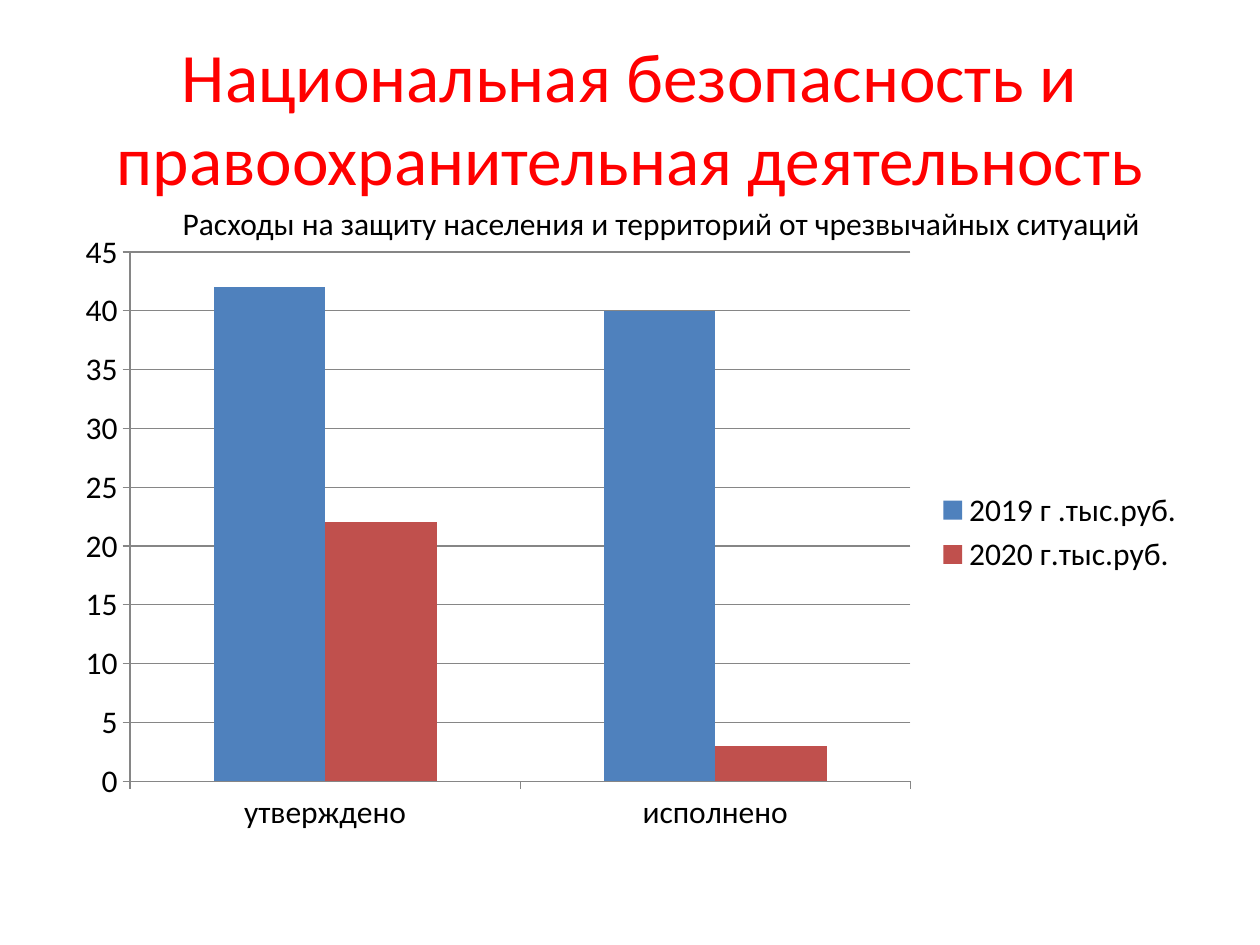
from dataclasses import dataclass

from pptx import Presentation
from pptx.chart.data import CategoryChartData as Data
from pptx.dml.color import RGBColor
from pptx.enum.chart import XL_CHART_TYPE as Kind, XL_LEGEND_POSITION as Side, XL_TICK_MARK as Tick
from pptx.enum.text import MSO_ANCHOR as Anchor, MSO_AUTO_SIZE as Fit, PP_ALIGN as Align
from pptx.util import Inches, Pt

WIDE, HIGH = Inches(10), Inches(7.5)
FACE = "Calibri"
BLACK, RED, GREY = "000000", "FF0000", "868686"


@dataclass
class Box:
    left: float
    top: float
    width: float
    height: float

    def frame(self) -> tuple:
        return (int(self.left * WIDE), int(self.top * HIGH),
                int(self.width * WIDE), int(self.height * HIGH))


@dataclass
class Group:
    name: str
    vals: tuple
    fill: str


GROUPS = (
    Group("2019 г .тыс.руб.", (42, 40), "4F81BD"),
    Group("2020 г.тыс.руб.", (22, 3), "C0504D"),
)


def color(code: str) -> RGBColor:
    return RGBColor.from_string(code)


def style(font, size: float, code: str) -> None:
    font.name = FACE
    font.size = Pt(size)
    font.color.rgb = color(code)


def write(shape, text: str, size: float, code: str, align) -> None:
    frame = shape.text_frame
    frame.text = text
    frame.word_wrap = True
    frame.auto_size = Fit.NONE
    line = frame.paragraphs[0]
    line.alignment = align
    style(line.runs[0].font, size, code)


def rule(line) -> None:
    line.color.rgb = color(GREY)
    line.width = Pt(0.75)


def plot(slide, box: Box, cats: tuple, groups: tuple) -> None:
    data = Data()
    data.categories = cats
    for group in groups:
        data.add_series(group.name, group.vals)
    chart = slide.shapes.add_chart(Kind.COLUMN_CLUSTERED, *box.frame(), data).chart
    style(chart.font, 18, BLACK)
    chart.has_title = False
    chart.has_legend = True
    chart.legend.position = Side.RIGHT
    chart.legend.include_in_layout = False
    bars = chart.plots[0]
    bars.gap_width = 150
    bars.overlap = 0
    bars.vary_by_categories = False
    for bar, group in zip(bars.series, groups):
        bar.format.fill.solid()
        bar.format.fill.fore_color.rgb = color(group.fill)
    for axis in (chart.category_axis, chart.value_axis):
        axis.major_tick_mark = Tick.OUTSIDE
        axis.minor_tick_mark = Tick.NONE
        rule(axis.format.line)
    scale = chart.value_axis
    scale.minimum_scale, scale.maximum_scale, scale.major_unit = 0, 45, 5
    scale.tick_labels.number_format = "General"
    scale.tick_labels.number_format_is_linked = False
    scale.has_major_gridlines = True
    rule(scale.major_gridlines.format.line)


def main() -> None:
    deck = Presentation()
    deck.slide_width, deck.slide_height = WIDE, HIGH
    slide = deck.slides.add_slide(deck.slide_layouts[5])
    title = slide.shapes.title
    title.left, title.top, title.width, title.height = Box(0.05, 0.04, 0.9, 1 / 6).frame()
    write(title, "Национальная безопасность и правоохранительная деятельность",
          39.6, RED, Align.CENTER)
    title.text_frame.vertical_anchor = Anchor.MIDDLE
    plot(slide, Box(0.05, 7 / 30, 0.9, 0.66), ("утверждено", "исполнено"), GROUPS)
    note = slide.shapes.add_textbox(*Box(0.13, 1.57 / 7.5, 0.81, 0.4 / 7.5).frame())
    write(note, "Расходы на защиту населения и территорий от чрезвычайных ситуаций",
          18, BLACK, Align.LEFT)
    note.text_frame.margin_left = Inches(0.15)
    deck.save("out.pptx")


if __name__ == "__main__":
    main()
